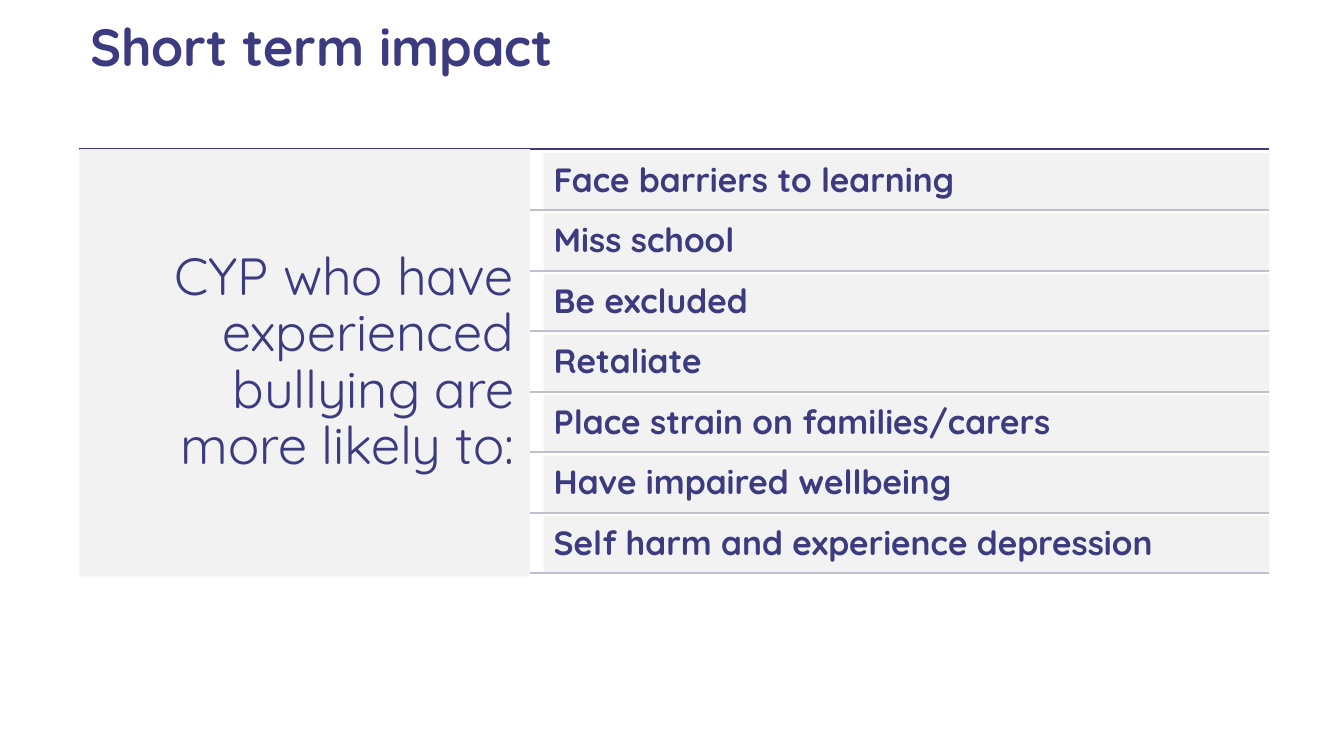
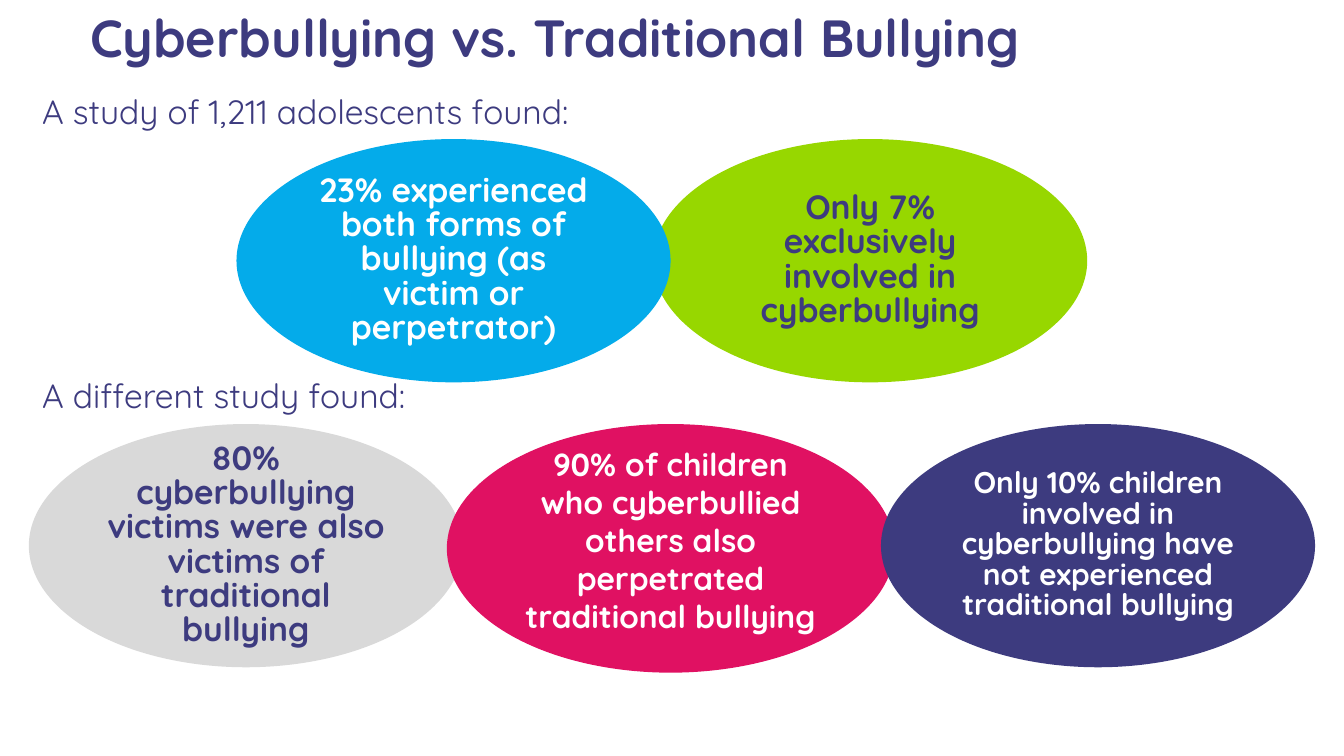
from dataclasses import dataclass

from lxml import etree
from pptx import Presentation
from pptx.dml.color import RGBColor
from pptx.enum.shapes import MSO_CONNECTOR, MSO_SHAPE
from pptx.enum.text import MSO_ANCHOR, MSO_AUTO_SIZE, PP_ALIGN
from pptx.oxml.ns import qn
from pptx.util import Emu, Pt

RECT, OVAL = MSO_SHAPE.RECTANGLE, MSO_SHAPE.OVAL
STRAIGHT = MSO_CONNECTOR.STRAIGHT
LEFT, CENTER, RIGHT = PP_ALIGN.LEFT, PP_ALIGN.CENTER, PP_ALIGN.RIGHT
TOP, MIDDLE = MSO_ANCHOR.TOP, MSO_ANCHOR.MIDDLE
NO_AUTOFIT = MSO_AUTO_SIZE.NONE

PX = 4572  # 200 px to the inch
SLIDE_W, SLIDE_H = 2000, 1125
TITLE_ONLY = 5

FONT = "Quicksand"
NAVY = "3D3B7F"
WHITE = "FFFFFF"
PANEL = "F2F2F2"
RULE = "C0BFCC"
GREEN = "97D700"
BLUE = "04ABEA"
GREY = "D9D9D9"
PINK = "E01162"


@dataclass(frozen=True)
class Box:
    x: int
    y: int
    w: int
    h: int

    def emu(self) -> tuple[Emu, ...]:
        return tuple(Emu(v * PX) for v in (self.x, self.y, self.w, self.h))


@dataclass(frozen=True)
class Finding:
    text: str
    box: Box
    fill: str
    color: str = WHITE
    size: int = 18
    line_spacing: float = 0.85
    space_after: float = 7.3
    inset_bottom: int = 6


def rgb(color: str) -> RGBColor:
    return RGBColor.from_string(color)


def write(shape, text: str, *, size: float = 18, color: str = NAVY,
          bold: bool = True, align=LEFT, anchor=MIDDLE,
          line_spacing: float = 0.9, space_after: float = 0,
          insets: tuple[int, int, int, int] = (15, 8, 15, 8)) -> None:
    """Put one formatted paragraph in a shape; insets are left, top, right, bottom."""
    tf = shape.text_frame
    tf.word_wrap = True
    tf.auto_size = NO_AUTOFIT
    tf.vertical_anchor = anchor
    (tf.margin_left, tf.margin_top,
     tf.margin_right, tf.margin_bottom) = (Emu(v * PX) for v in insets)
    p = tf.paragraphs[0]
    p.alignment = align
    p.line_spacing = line_spacing
    p.space_before = Pt(0)
    p.space_after = Pt(space_after)
    r = p.add_run()
    r.text = text
    r.font.name = FONT
    r.font.size = Pt(size)
    r.font.bold = bold
    r.font.color.rgb = rgb(color)


def add_filled(s, kind, box: Box, fill: str):
    sp = s.shapes.add_shape(kind, *box.emu())
    sp.shadow.inherit = False
    sp.fill.solid()
    sp.fill.fore_color.rgb = rgb(fill)
    sp.line.fill.background()
    return sp


def add_rule(s, x1: int, x2: int, y: int, color: str) -> None:
    line = s.shapes.add_connector(STRAIGHT, *(Emu(v * PX) for v in (x1, y, x2, y)))
    line.line.color.rgb = rgb(color)
    line.line.width = Pt(1)
    etree.SubElement(line._element.spPr, qn("a:effectLst"))


def add_titled_slide(prs, title: str, box: Box):
    s = prs.slides.add_slide(prs.slide_layouts[TITLE_ONLY])
    sp = s.shapes.title
    sp.left, sp.top, sp.width, sp.height = box.emu()
    write(sp, title, size=28)
    return s


IMPACTS = [
    "Face barriers to learning",
    "Miss school",
    "Be excluded",
    "Retaliate",
    "Place strain on families/carers",
    "Have impaired wellbeing",
    "Self harm and experience depression",
]
LEAD = Box(118, 222, 671, 636)
ROW = Box(809, 228, 1080, 86)
ROW_PITCH = 90
RULE_OFFSET = 85


def build_impact_slide(prs) -> None:
    s = add_titled_slide(prs, "Short term impact", Box(119, 1, 1764, 146))
    lead_right, row_right = LEAD.x + LEAD.w, ROW.x + ROW.w
    add_rule(s, LEAD.x, row_right, LEAD.y, NAVY)
    write(add_filled(s, RECT, LEAD, PANEL),
          "CYP who have experienced bullying are more likely to:",
          size=28, bold=False, align=RIGHT, insets=(24, 24, 24, 24))
    for i, impact in enumerate(IMPACTS):
        y = ROW.y + i * ROW_PITCH
        write(add_filled(s, RECT, Box(ROW.x, y, ROW.w, ROW.h), PANEL),
              impact, anchor=TOP, insets=(15, 15, 15, 15))
        add_rule(s, lead_right, row_right, y + RULE_OFFSET, RULE)


STUDIES = [
    ("A study of 1,211 adolescents found:", Box(43, 126, 1040, 84)),
    ("A different study found:", Box(43, 548, 1040, 84)),
]
OVAL_W, OVAL_H = 646, 362
FIRST_Y, SECOND_Y = 207, 631
FINDINGS = [
    Finding("Only 7% exclusively involved in cyberbullying",
            Box(972, FIRST_Y, OVAL_W, OVAL_H), GREEN, NAVY),
    Finding("23% experienced both forms of bullying (as victim or perpetrator)",
            Box(352, FIRST_Y, OVAL_W, OVAL_H), BLUE),
    Finding("80% cyberbullying victims were also victims of traditional bullying",
            Box(43, SECOND_Y, OVAL_W, OVAL_H), GREY, NAVY),
    Finding("90% of children who cyberbullied others also perpetrated "
            "traditional bullying",
            Box(665, SECOND_Y, 666, 370), PINK, size=17,
            line_spacing=1.0, space_after=0, inset_bottom=32),
    Finding("Only 10% children involved in cyberbullying have not experienced "
            "traditional bullying",
            Box(1311, SECOND_Y, OVAL_W, OVAL_H), NAVY, size=16),
]


def build_comparison_slide(prs) -> None:
    s = add_titled_slide(prs, "Cyberbullying vs. Traditional Bullying",
                         Box(119, -13, 1838, 146))
    for text, box in STUDIES:
        write(s.shapes.add_textbox(*box.emu()), text, bold=False, anchor=TOP,
              line_spacing=1.0, insets=(20, 10, 20, 10))
    for f in FINDINGS:
        write(add_filled(s, OVAL, f.box, f.fill), f.text, size=f.size,
              color=f.color, align=CENTER, line_spacing=f.line_spacing,
              space_after=f.space_after, insets=(12, 6, 12, f.inset_bottom))


def main() -> None:
    prs = Presentation()
    prs.slide_width, prs.slide_height = Emu(SLIDE_W * PX), Emu(SLIDE_H * PX)
    build_impact_slide(prs)
    build_comparison_slide(prs)
    prs.save("out.pptx")


if __name__ == "__main__":
    main()
